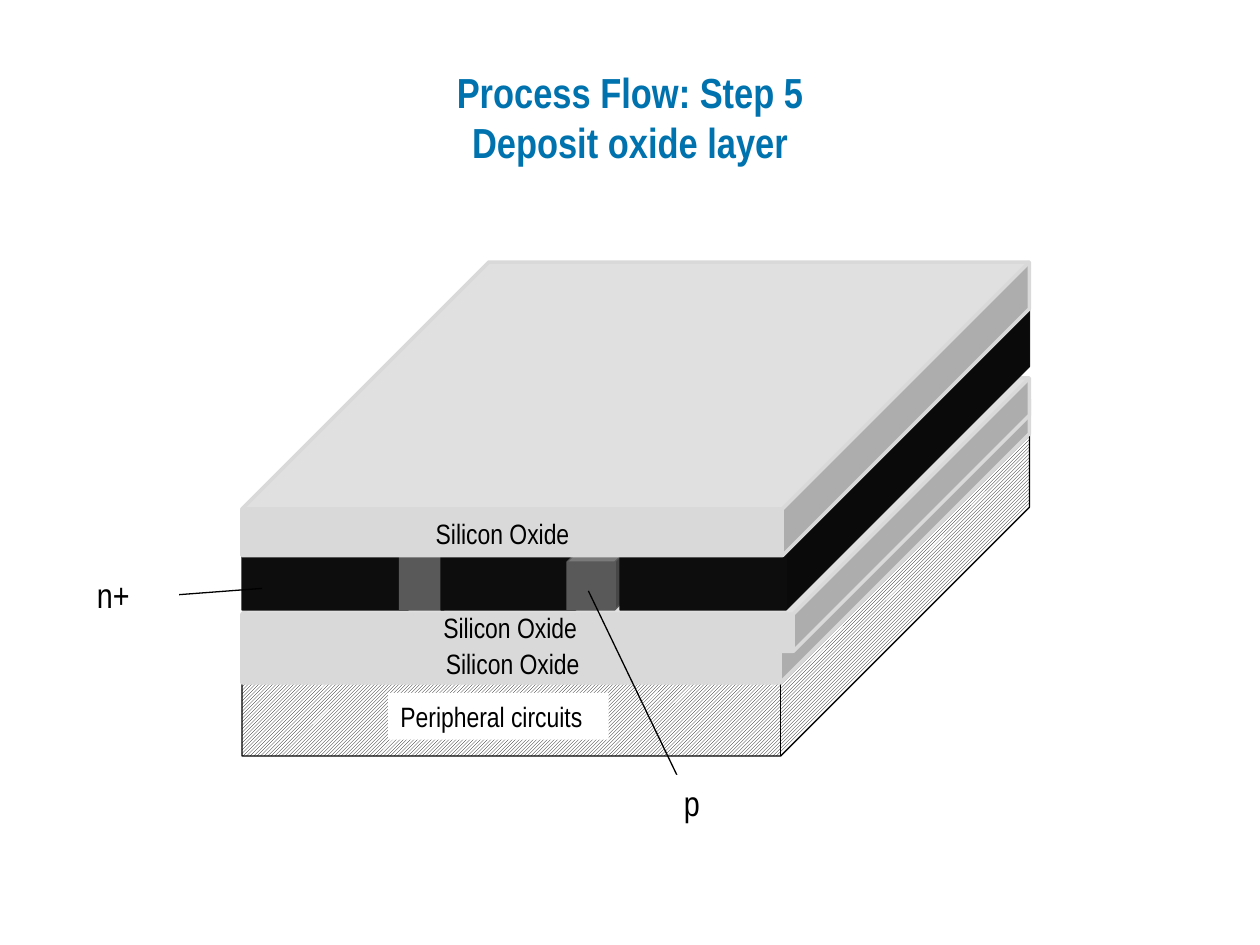
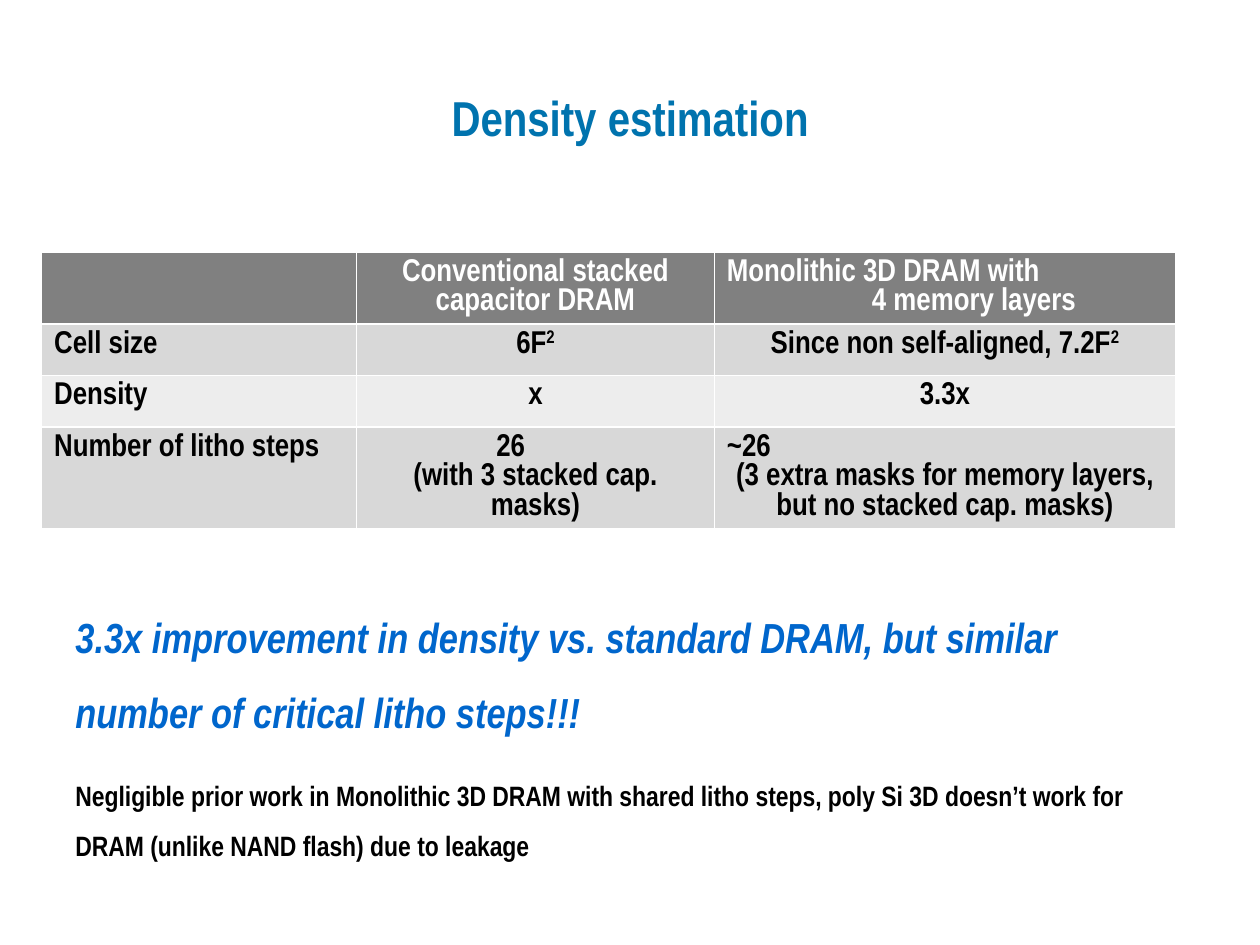
from lxml.etree import SubElement
from pptx import Presentation
from pptx.dml.color import RGBColor
from pptx.enum.dml import MSO_PATTERN
from pptx.enum.shapes import MSO_CONNECTOR, MSO_SHAPE
from pptx.enum.text import MSO_ANCHOR, MSO_AUTO_SIZE, PP_ALIGN
from pptx.oxml.ns import qn
from pptx.util import Inches, Pt

HEX = {"title": "0073AE", "note": "0066CC", "ink": "000000", "paper": "FFFFFF",
       "oxide": "D9D9D9", "n": "0D0D0D", "p": "595959",
       "head": "808080", "odd": "D8D8D8", "even": "EDEDED"}
FACE = "Arial Narrow"
LEFT, MID = PP_ALIGN.LEFT, PP_ALIGN.CENTER


def rgb(name):
    return RGBColor.from_string(HEX[name])


def put(item, **vals):
    for key, val in vals.items():
        setattr(item, key, val)


def style(font, size, color="ink", **more):
    put(font, name=FACE, size=Pt(size), **more)
    font.color.rgb = rgb(color)


def paint(shape, fill, line=None, width=0.75):
    shape.shadow.inherit = False
    shape.fill.solid()
    shape.fill.fore_color.rgb = rgb(fill)
    if line:
        shape.line.color.rgb = rgb(line)
        shape.line.width = Pt(width)
    else:
        shape.line.fill.background()


def inch(*nums):
    return [Inches(n) for n in nums]


def start(deck, text, size):
    slide = deck.slides.add_slide(deck.slide_layouts[5])
    title = slide.shapes.title
    put(title, **dict(zip(("left", "top", "width", "height"), inch(0.5, 0.3, 9, 1.25))))
    put(title.text_frame, text=text, word_wrap=True,
        auto_size=MSO_AUTO_SIZE.NONE, vertical_anchor=MSO_ANCHOR.MIDDLE)
    for para in title.text_frame.paragraphs:
        para.alignment = MID
        style(para.font, size, "title", bold=True)
    return slide


def cube(slide, box, adj, color, width=0.75):
    shape = slide.shapes.add_shape(MSO_SHAPE.CUBE, *inch(*box))
    shape.adjustments[0] = adj
    paint(shape, color, color, width)
    return shape


def label(slide, box, text, size, fill=None):
    if fill:
        shape = slide.shapes.add_shape(MSO_SHAPE.RECTANGLE, *inch(*box))
        paint(shape, fill)
    else:
        shape = slide.shapes.add_textbox(*inch(*box))
    frame = shape.text_frame
    put(frame, text=text, word_wrap=True, vertical_anchor=MSO_ANCHOR.TOP)
    para = frame.paragraphs[0]
    para.alignment = LEFT
    style(para.font, size)


def wire(slide, *ends):
    line = slide.shapes.add_connector(MSO_CONNECTOR.STRAIGHT, *inch(*ends))
    line.line.color.rgb = rgb("ink")
    line.line.width = Pt(0.75)
    SubElement(line._element.spPr, qn("a:effectLst"))


def stack(slide, x, y, wide):
    base = cube(slide, (x, y + 1.34, wide, 2.58), 0.765, "ink")
    base.fill.patterned()
    base.fill.pattern = MSO_PATTERN.DARK_UPWARD_DIAGONAL
    base.fill.fore_color.rgb = rgb("ink")
    base.fill.back_color.rgb = rgb("paper")

    for top, high, adj in ((1.09, 2.25, 0.879), (0.92, 2.17, 0.864)):
        cube(slide, (x, y + top, wide, high), adj, "oxide", 2)
    for dx, part, adj, kind in ((0, 3.25, 0.798, "n"), (1.25, 2.25, 0.843, "p"),
                                (1.58, 3, 0.798, "n"), (2.58, 2.42, 0.843, "p"),
                                (3, 3.25, 0.798, "n")):
        cube(slide, (x + dx, y + 0.34, part, 2.42), adj, kind)
    cube(slide, (x, y, wide, 2.33), 0.841, "oxide", 2)

    for dx, dy in ((1.52, 3), (1.5, 2.72), (1.44, 1.97)):
        label(slide, (x + dx, y + dy, 2.89, 0.37), "Silicon Oxide", 16)
    label(slide, (x + 1.16, y + 3.42, 1.75, 0.37), "Peripheral circuits", 16, "paper")
    wire(slide, x - 0.5, y + 2.64, x + 0.16, y + 2.59)
    wire(slide, x + 2.75, y + 2.61, x + 3.5, y + 4.17)
    for text, dx, dy in (("n+", -1.25, 2.42), ("p", 3.41, 4.07)):
        label(slide, (x + dx, y + dy, 0.75, 0.44), text, 20, "paper")


ROWS = [
    (0.57, [[], [("Conventional stacked capacitor DRAM", MID, 0)],
            [("Monolithic 3D DRAM with", LEFT, 0), ("4 memory layers", MID, 0.46)]]),
    (0.41, [[("Cell size", LEFT, 0)], [("6F^2", MID, 0)],
            [("Since non self-aligned, 7.2F^2", MID, 0)]]),
    (0.41, [[("Density", LEFT, 0)], [("x", MID, 0)], [("3.3x", MID, 0)]]),
    (0.8, [[("Number of litho steps", LEFT, 0)],
           [("26", LEFT, 1.01), ("(with 3 stacked cap. masks)", MID, 0)],
           [("~26", LEFT, 0),
            ("(3 extra masks for memory layers, but no stacked cap. masks)", MID, 0)]]),
]


def edge(cell):
    prop = cell._tc.get_or_add_tcPr()
    for side in ("lnL", "lnR", "lnT", "lnB"):
        line = SubElement(prop, qn("a:" + side), w=str(Pt(1)))
        fill = SubElement(line, qn("a:solidFill"))
        SubElement(fill, qn("a:srgbClr"), val=HEX["paper"])


def write(cell, paras, color):
    frame = cell.text_frame
    for num, (text, align, dent) in enumerate(paras):
        para = frame.add_paragraph() if num else frame.paragraphs[0]
        put(para, alignment=align, line_spacing=1.0)
        if dent:
            para._p.get_or_add_pPr().set("marL", str(Inches(dent)))
        main, _, power = text.partition("^")
        for part, rise in ((main, 0), (power, 30000)):
            if part:
                run = para.add_run()
                run.text = part
                style(run.font, 18, color, bold=True)
                if rise:
                    run._r.get_or_add_rPr().set("baseline", str(rise))


def grid(slide, x, y, cols):
    high = sum(row[0] for row in ROWS)
    table = slide.shapes.add_table(len(ROWS), len(cols), *inch(x, y, sum(cols), high)).table
    for col, wide in zip(table.columns, cols):
        col.width = Inches(wide)
    for r, (tall, cells) in enumerate(ROWS):
        table.rows[r].height = Inches(tall)
        shade = "head" if r == 0 else ("even", "odd")[r % 2]
        for c, paras in enumerate(cells):
            cell = table.cell(r, c)
            edge(cell)
            cell.fill.solid()
            cell.fill.fore_color.rgb = rgb(shade)
            write(cell, paras, "ink" if r else "paper")


def note(slide, box):
    frame = slide.shapes.add_textbox(*inch(*box)).text_frame
    frame.word_wrap = True
    first, last = frame.paragraphs[0], frame.add_paragraph()
    first.text = ("3.3x improvement in density vs. standard DRAM, "
                  "but similar number of critical litho steps!!!")
    last.text = ("Negligible prior work in Monolithic 3D DRAM with shared litho steps, "
                 "poly Si 3D doesn’t work for DRAM (unlike NAND flash) due to leakage")
    put(first, line_spacing=1.5)
    put(last, line_spacing=1.5, space_before=Pt(14))
    style(first.font, 24, "note", bold=True, italic=True)
    style(last.font, 16, bold=True)


def main():
    deck = Presentation()
    put(deck, slide_width=Inches(10), slide_height=Inches(7.5))
    flow = start(deck, "Process Flow: Step 5\vDeposit oxide layer", 24)
    stack(flow, 1.92, 2.08, 6.25)
    dense = start(deck, "Density estimation", 28)
    grid(dense, 0.33, 2, (2.5, 2.84, 3.66))
    note(dense, (0.5, 4.6, 8.83, 2.32))
    deck.save("out.pptx")


if __name__ == "__main__":
    main()
